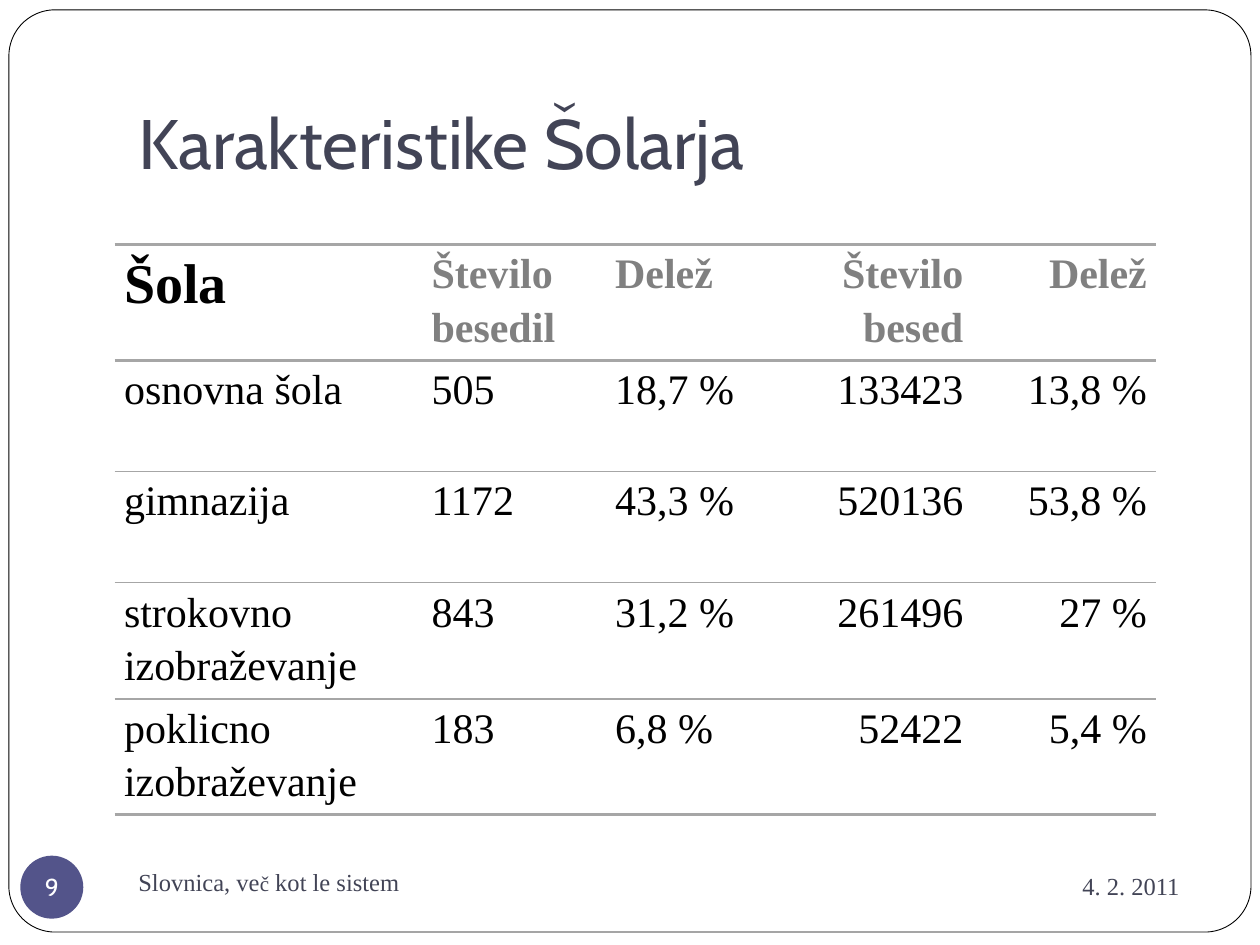
from dataclasses import dataclass

from lxml import etree
from pptx import Presentation
from pptx import util as u
from pptx.dml.color import RGBColor
from pptx.enum import shapes, text
from pptx.oxml import ns

COLORS = {
    "white": "FFFFFF", "black": "000000", "ink": "424456",
    "badge": "53548A", "head": "808080", "rule": "A6A6A6",
}
SERIF, SANS = "Times New Roman", "Cabin"
LEFT, CENTER, RIGHT, JUSTIFY = (text.PP_ALIGN.LEFT, text.PP_ALIGN.CENTER,
                                text.PP_ALIGN.RIGHT, text.PP_ALIGN.JUSTIFY)
MIDDLE, BOTTOM = text.MSO_ANCHOR.MIDDLE, text.MSO_ANCHOR.BOTTOM


@dataclass
class Label:
    runs: list  # (text, size) pairs
    box: tuple  # left, top, width, height in cm
    font: str = SERIF
    align: text.PP_ALIGN = LEFT
    anchor: text.MSO_ANCHOR = MIDDLE
    bottom: float = 0.13


@dataclass
class Column:
    width: float
    align: text.PP_ALIGN


LABELS = [
    Label([("Karakteristike Šolarja", 40)], (2.54, 0.76, 21.59, 3.18),
          font=SANS, anchor=BOTTOM, bottom=0.25),
    Label([("4. 2. 2011", 14)], (17.15, 17.2, 6.88, 1.32), align=RIGHT),
    Label([("Slovnica, ve", 14), ("č", 12), (" kot le sistem", 14)],
          (2.54, 17.15, 11, 1.27)),
]
COLUMNS = [Column(6.2, JUSTIFY), Column(3.7, LEFT), Column(3.7, JUSTIFY),
           Column(3.7, RIGHT), Column(3.7, RIGHT)]
ROWS = [
    ("Šola", "Število besedil", "Delež", "Število besed", "Delež"),
    ("osnovna šola", "505", "18,7 %", "133423", "13,8 %"),
    ("gimnazija", "1172", "43,3 %", "520136", "53,8 %"),
    ("strokovno izobraževanje", "843", "31,2 %", "261496", "27 %"),
    ("poklicno izobraževanje", "183", "6,8 %", "52422", "5,4 %"),
]
ROW_HEIGHT = 2.24
RULES = [1.5, 1.5, 1, 1, 1.5]  # points, from the top edge down to the bottom


def rgb(name: str) -> RGBColor:
    return RGBColor.from_string(COLORS[name])


def write(tf, runs: list, *, font: str = SERIF, color: str = "ink",
          align=LEFT, bold: bool = False):
    """Put the runs in the first paragraph and return it."""
    p = tf.paragraphs[0]
    p.alignment = align
    for words, size in runs:
        r = p.add_run()
        r.text = words
        r.font.name, r.font.size, r.font.bold = font, u.Pt(size), bold
        r.font.color.rgb = rgb(color)
    return p


def add_label(s, label: Label) -> None:
    tf = s.shapes.add_textbox(*map(u.Cm, label.box)).text_frame
    tf.word_wrap = True
    tf.vertical_anchor = label.anchor
    tf.margin_bottom = u.Cm(label.bottom)
    write(tf, label.runs, font=label.font, align=label.align)


def add_plain_shape(s, kind, box: tuple, fill: str):
    sp = s.shapes.add_shape(kind, *map(u.Cm, box))
    sp.shadow.inherit = False
    sp.fill.solid()
    sp.fill.fore_color.rgb = rgb(fill)
    sp.line.fill.background()
    return sp


def set_borders(cell, top: float, bottom: float) -> None:
    """Rule the cell above and below, with open sides."""
    tc_pr = cell._tc.get_or_add_tcPr()
    widths = {"a:lnL": 0, "a:lnR": 0, "a:lnT": top, "a:lnB": bottom}
    for i, (tag, width) in enumerate(widths.items()):
        ln = etree.Element(ns.qn(tag), w=str(int(u.Pt(width))))
        if width:
            fill = etree.SubElement(ln, ns.qn("a:solidFill"))
            etree.SubElement(fill, ns.qn("a:srgbClr"), val=COLORS["rule"])
        else:
            etree.SubElement(ln, ns.qn("a:noFill"))
        tc_pr.insert(i, ln)


def add_school_table(s, left: float, top: float) -> None:
    width = sum(c.width for c in COLUMNS)
    table = s.shapes.add_table(
        len(ROWS), len(COLUMNS), u.Cm(left), u.Cm(top),
        u.Cm(width), u.Cm(ROW_HEIGHT * len(ROWS))).table
    table.first_row = table.horz_banding = False
    for j, column in enumerate(COLUMNS):
        table.columns[j].width = u.Cm(column.width)
    for i, row in enumerate(ROWS):
        table.rows[i].height = u.Cm(ROW_HEIGHT)
        rules = RULES[i], (RULES + [1.5])[i + 1]
        for j, (words, column) in enumerate(zip(row, COLUMNS)):
            cell = table.cell(i, j)
            cell.fill.background()
            cell.margin_left = cell.margin_right = u.Cm(0.19)
            cell.margin_top = cell.margin_bottom = 0
            set_borders(cell, *rules)
            header, corner = i == 0, i == j == 0
            p = write(cell.text_frame, [(words, 32 if corner else 24)],
                      color="head" if header and not corner else "black",
                      align=column.align, bold=header)
            p.line_spacing = 1.15
            p.space_before = u.Pt(6)


def main() -> None:
    prs = Presentation()
    prs.slide_width, prs.slide_height = u.Cm(25.4), u.Cm(19.05)
    s = prs.slides.add_slide(prs.slide_layouts[6])

    # Rounded frame
    frame = add_plain_shape(s, shapes.MSO_SHAPE.ROUNDED_RECTANGLE,
                            (0.18, 0.2, 25.04, 18.59), "white")
    frame.adjustments[0] = 0.05
    frame.line.color.rgb = rgb("black")
    frame.line.width = u.Pt(0.5)

    # Title, date and footer
    for label in LABELS:
        add_label(s, label)

    # Slide number badge
    badge = add_plain_shape(s, shapes.MSO_SHAPE.OVAL,
                            (0.41, 17.25, 1.27, 1.27), "badge")
    tf = badge.text_frame
    tf.word_wrap = False
    tf.vertical_anchor = MIDDLE
    tf.margin_left = tf.margin_right = tf.margin_top = tf.margin_bottom = 0
    write(tf, [("9", 14)], font=SANS, color="white", align=CENTER)

    # Schools table
    add_school_table(s, 2.31, 4.93)
    prs.save("out.pptx")


if __name__ == "__main__":
    main()
